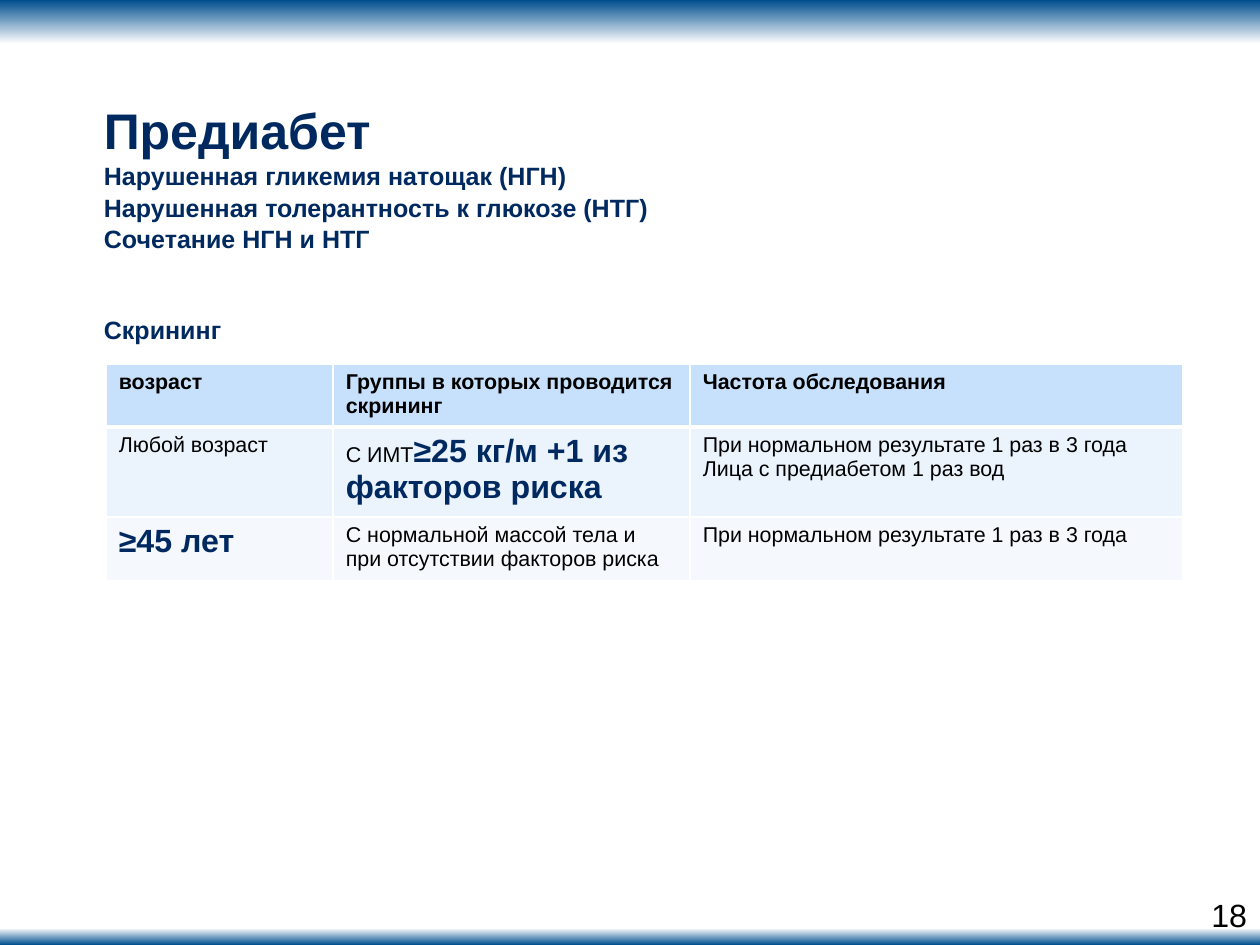
from dataclasses import dataclass

from lxml.etree import SubElement
from pptx import Presentation
from pptx.dml.color import RGBColor as Rgb
from pptx.enum.shapes import MSO_SHAPE as Shape
from pptx.enum.text import MSO_ANCHOR as Anchor, MSO_AUTO_SIZE as Fit, PP_ALIGN as Align
from pptx.oxml.ns import qn
from pptx.util import Pt

PX = 7112  # EMU in one px
WIDTH, HEIGHT = 1260, 945

NAVY = Rgb(0x00, 0x29, 0x60)
BLUE = Rgb(0x00, 0x4E, 0x8E)
WHITE = Rgb(0xFF, 0xFF, 0xFF)
BLACK = Rgb(0x00, 0x00, 0x00)
HEAD = Rgb(0xC7, 0xE0, 0xFB)
PALE = Rgb(0xEB, 0xF3, 0xFD)
FAINT = Rgb(0xF5, 0xF9, 0xFE)


@dataclass(frozen=True)
class Style:
    size: int
    color: Rgb
    bold: bool = False


@dataclass(frozen=True)
class Bar:
    top: int
    height: int
    angle: int


@dataclass(frozen=True)
class Line:
    text: str
    style: Style
    gap: float = 0


@dataclass(frozen=True)
class Row:
    height: int
    fill: Rgb
    cells: list  # each cell is a list of paragraphs, each paragraph a list of runs
    top: int = 1
    base: int = 1


TITLE = Style(28, NAVY, True)
SUB = Style(14, NAVY, True)
LABEL = Style(12, BLACK, True)
BODY = Style(12, BLACK)
KEY = Style(18, NAVY, True)
PAGE = Style(18, BLACK)

BARS = [Bar(0, 44, 270), Bar(928, 17, 90)]

LINES = [
    Line("Предиабет", TITLE),
    Line("Нарушенная гликемия натощак (НГН)", SUB, 0.7),
    Line("Нарушенная толерантность к глюкозе (НТГ)", SUB, 0.7),
    Line("Сочетание НГН и НТГ", SUB, 0.7),
    Line("Скрининг", SUB, 34.3),
]

COLS = [227, 357, 493]
NORMAL = [("При нормальном результате 1 раз в 3 года", BODY)]
ROWS = [
    Row(63, HEAD, [
        [[("возраст", LABEL)]],
        [[("Группы в которых проводится скрининг", LABEL)]],
        [[("Частота обследования", LABEL)]],
    ], base=3),
    Row(90, PALE, [
        [[("Любой возраст", BODY)]],
        [[("С ИМТ", BODY), ("≥25 кг/м +1 из факторов риска", KEY)]],
        [NORMAL, [("Лица с предиабетом 1 раз вод", BODY)]],
    ], top=3),
    Row(64, FAINT, [
        [[("≥45 лет", KEY)]],
        [[("С нормальной массой тела и при отсутствии факторов риска", BODY)]],
        [NORMAL],
    ]),
]


def assign(obj, values: dict) -> None:
    for name, value in values.items():
        setattr(obj, name, value)


def box(left: int, top: int, width: int, height: int) -> list[int]:
    """Turn px into EMU."""
    return [n * PX for n in (left, top, width, height)]


def add_run(para, text: str, style: Style) -> None:
    run = para.add_run()
    run.text = text
    assign(run.font, {"name": "Arial", "size": Pt(style.size), "bold": style.bold})
    run.font.color.rgb = style.color


def next_para(frame, index: int):
    return frame.add_paragraph() if index else frame.paragraphs[0]


def add_bar(slide, bar: Bar) -> None:
    shape = slide.shapes.add_shape(Shape.RECTANGLE, *box(0, bar.top, WIDTH, bar.height))
    shape.shadow.inherit = False
    shape.line.fill.background()
    shape.fill.gradient()
    shape.fill.gradient_angle = bar.angle
    for stop, color, place in zip(shape.fill.gradient_stops, (BLUE, WHITE), (0, 1)):
        stop.color.rgb = color
        stop.position = place


def fill_title(title) -> None:
    left, top, width, height = box(91, 93, 1105, 280)
    assign(title, {"left": left, "top": top, "width": width, "height": height})
    frame = title.text_frame
    assign(frame, {"word_wrap": True, "auto_size": Fit.NONE, "vertical_anchor": Anchor.TOP})
    for i, line in enumerate(LINES):
        para = next_para(frame, i)
        assign(para, {"alignment": Align.LEFT, "space_before": Pt(line.gap)})
        add_run(para, line.text, line.style)


def add_edges(cell, row: Row) -> None:
    """Draw the white borders; they stand before the fill in the XML."""
    props = cell._tc.get_or_add_tcPr()
    edges = {"a:lnL": 1, "a:lnR": 1, "a:lnT": row.top, "a:lnB": row.base}
    for i, (tag, width) in enumerate(edges.items()):
        edge = SubElement(props, qn(tag), w=str(Pt(width)))
        SubElement(SubElement(edge, qn("a:solidFill")), qn("a:srgbClr"), val=str(WHITE))
        props.insert(i, edge)


def add_grid(slide) -> None:
    place = box(106, 364, sum(COLS), sum(row.height for row in ROWS))
    table = slide.shapes.add_table(len(ROWS), len(COLS), *place).table
    assign(table, {"first_row": False, "horz_banding": False})
    for col, width in zip(table.columns, COLS):
        col.width = width * PX
    for r, row in enumerate(ROWS):
        table.rows[r].height = row.height * PX
        for c, paras in enumerate(row.cells):
            cell = table.cell(r, c)
            cell.fill.solid()
            cell.fill.fore_color.rgb = row.fill
            add_edges(cell, row)
            for i, runs in enumerate(paras):
                para = next_para(cell.text_frame, i)
                for text, style in runs:
                    add_run(para, text, style)


def add_page(slide) -> None:
    frame = slide.shapes.add_textbox(*box(900, 895, 347, 50)).text_frame
    sides = ("left", "top", "right", "bottom")
    assign(frame, {"word_wrap": True} | {f"margin_{side}": 0 for side in sides})
    para = frame.paragraphs[0]
    para.alignment = Align.RIGHT
    add_run(para, "18", PAGE)


def main() -> None:
    deck = Presentation()
    assign(deck, {"slide_width": WIDTH * PX, "slide_height": HEIGHT * PX})
    slide = deck.slides.add_slide(deck.slide_layouts[5])
    for bar in BARS:
        add_bar(slide, bar)
    fill_title(slide.shapes.title)
    add_grid(slide)
    add_page(slide)
    deck.save("out.pptx")


if __name__ == "__main__":
    main()
